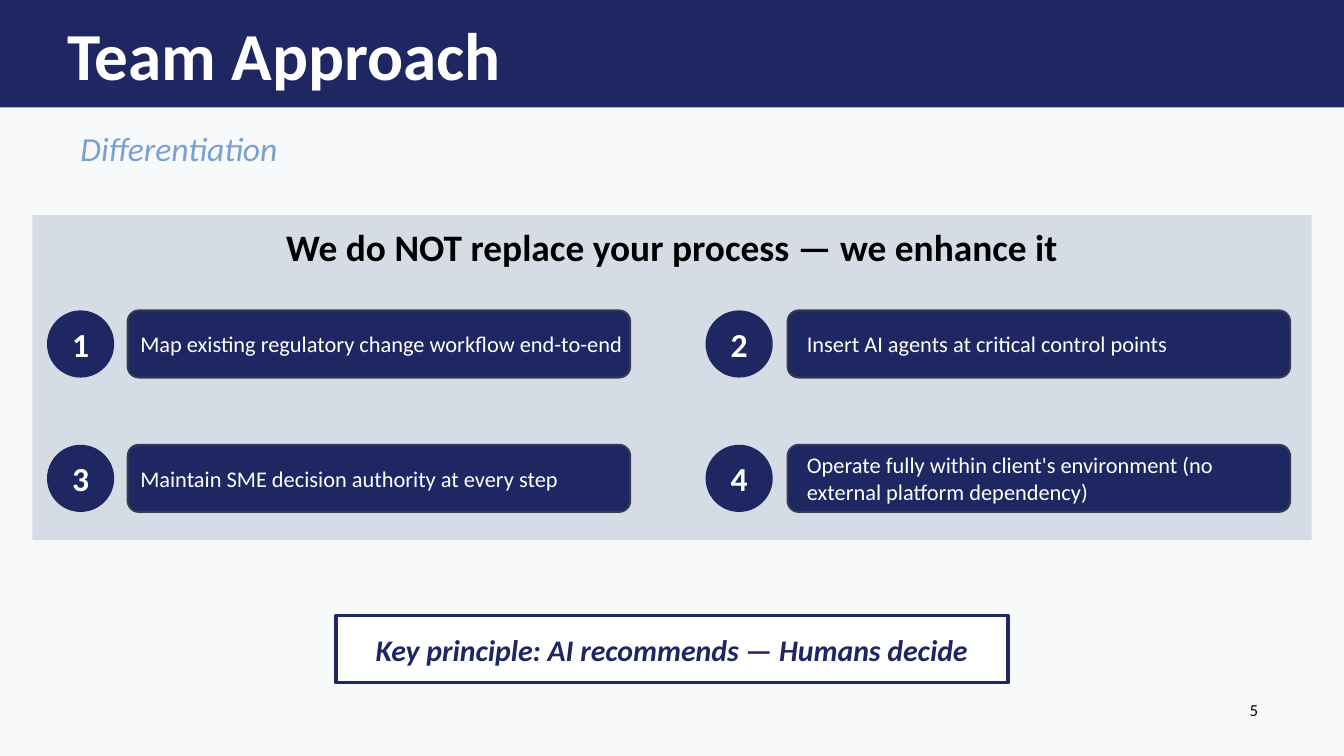
from typing import NamedTuple

from pptx import Presentation
from pptx.dml.color import RGBColor
from pptx.enum.shapes import MSO_SHAPE as Shape
from pptx.enum.text import MSO_ANCHOR as Anchor, MSO_AUTO_SIZE as AutoSize, PP_ALIGN as Align
from pptx.util import Inches, Pt

NAVY = RGBColor(0x1E, 0x27, 0x61)
SLATE = RGBColor(0x33, 0x3F, 0x50)
SKY = RGBColor(0x79, 0xA0, 0xD3)
PANEL = RGBColor(0xD6, 0xDC, 0xE5)
PAPER = RGBColor(0xF8, 0xF9, 0xFA)
WHITE = RGBColor(0xFF, 0xFF, 0xFF)
BLACK = RGBColor(0, 0, 0)

FONT = "Calibri"
STEP_HEIGHT = 0.5
CARD_WIDTH = 3.74
ROW_TOP, ROW_PITCH = 2.31, 1.0


class Box(NamedTuple):
    left: float
    top: float
    width: float
    height: float


class Style(NamedTuple):
    size: float
    color: RGBColor
    bold: bool = False
    italic: bool = False
    align: Align = Align.LEFT
    anchor: Anchor = Anchor.MIDDLE


class Column(NamedTuple):
    circle_left: float
    card_left: float
    text_inset: float


COLUMNS = [Column(0.35, 0.95, 0.07), Column(5.25, 5.86, 0.12)]
STEPS = [
    "Map existing regulatory change workflow end-to-end",
    "Insert AI agents at critical control points",
    "Maintain SME decision authority at every step",
    "Operate fully within client's environment (no external platform dependency)",
]
NUMBER_STYLE = Style(18, WHITE, bold=True, align=Align.CENTER)
CARD_STYLE = Style(12, WHITE)


def write(shape, text: str, style: Style, left: float = 0.1, top: float = 0) -> None:
    """Put one formatted paragraph in a shape, with its margins in inches."""
    frame = shape.text_frame
    frame.text = text
    frame.word_wrap = True
    frame.auto_size = AutoSize.NONE
    frame.vertical_anchor = style.anchor
    frame.margin_left, frame.margin_right = Inches(left), 0
    frame.margin_top, frame.margin_bottom = Inches(top), 0
    paragraph = frame.paragraphs[0]
    paragraph.alignment = style.align
    font = paragraph.runs[0].font
    font.name, font.size = FONT, Pt(style.size)
    font.bold, font.italic = style.bold, style.italic
    font.color.rgb = style.color


def add_box(slide, kind: Shape, box: Box, fill: RGBColor,
            line: RGBColor | None = None, line_width: float = 1):
    """Add a flat filled shape, outlined only when a line colour is given."""
    shape = slide.shapes.add_shape(kind, *map(Inches, box))
    shape.shadow.inherit = False
    shape.fill.solid()
    shape.fill.fore_color.rgb = fill
    if line is None:
        shape.line.fill.background()
    else:
        shape.line.color.rgb = line
        shape.line.width = Pt(line_width)
    return shape


def add_label(slide, box: Box, text: str, style: Style) -> None:
    write(slide.shapes.add_textbox(*map(Inches, box)), text, style)


def add_step(slide, index: int, text: str) -> None:
    """Add a numbered circle and its card, filling the grid row by row."""
    row, position = divmod(index, len(COLUMNS))
    column = COLUMNS[position]
    top = ROW_TOP + row * ROW_PITCH
    circle = add_box(slide, Shape.OVAL,
                     Box(column.circle_left, top, STEP_HEIGHT, STEP_HEIGHT), NAVY)
    write(circle, str(index + 1), NUMBER_STYLE, left=0)
    card = add_box(slide, Shape.ROUNDED_RECTANGLE,
                   Box(column.card_left, top, CARD_WIDTH, STEP_HEIGHT), NAVY, SLATE)
    write(card, text, CARD_STYLE, left=column.text_inset)


def main() -> None:
    presentation = Presentation()
    presentation.slide_width = Inches(10)
    presentation.slide_height = presentation.slide_width * 9 // 16
    slide = presentation.slides.add_slide(presentation.slide_layouts[5])
    slide.background.fill.solid()
    slide.background.fill.fore_color.rgb = PAPER

    # Title banner and subtitle
    title = slide.shapes.title
    title.left, title.top, title.width, title.height = map(Inches, Box(0, 0, 10, 0.8))
    title.fill.solid()
    title.fill.fore_color.rgb = NAVY
    write(title, "Team Approach", Style(36, WHITE, bold=True), left=0.5)
    add_label(slide, Box(0.5, 0.95, 9, 0.3), "Differentiation",
              Style(18, SKY, italic=True))

    # Panel with its heading and the four steps
    panel = add_box(slide, Shape.RECTANGLE, Box(0.24, 1.6, 9.52, 2.42), PANEL)
    write(panel, "We do NOT replace your process — we enhance it",
          Style(20, BLACK, bold=True, align=Align.CENTER, anchor=Anchor.TOP),
          left=0, top=0.07)
    for index, text in enumerate(STEPS):
        add_step(slide, index, text)

    # Key principle
    principle = add_box(slide, Shape.RECTANGLE, Box(2.5, 4.58, 5, 0.5), WHITE, NAVY, 2)
    write(principle, "Key principle: AI recommends — Humans decide",
          Style(16, NAVY, bold=True, italic=True, align=Align.CENTER), left=0)

    # Page number
    add_label(slide, Box(9.2, 5.2, 0.47, 0.16), "5", Style(9, BLACK))

    presentation.save("out.pptx")


if __name__ == "__main__":
    main()
